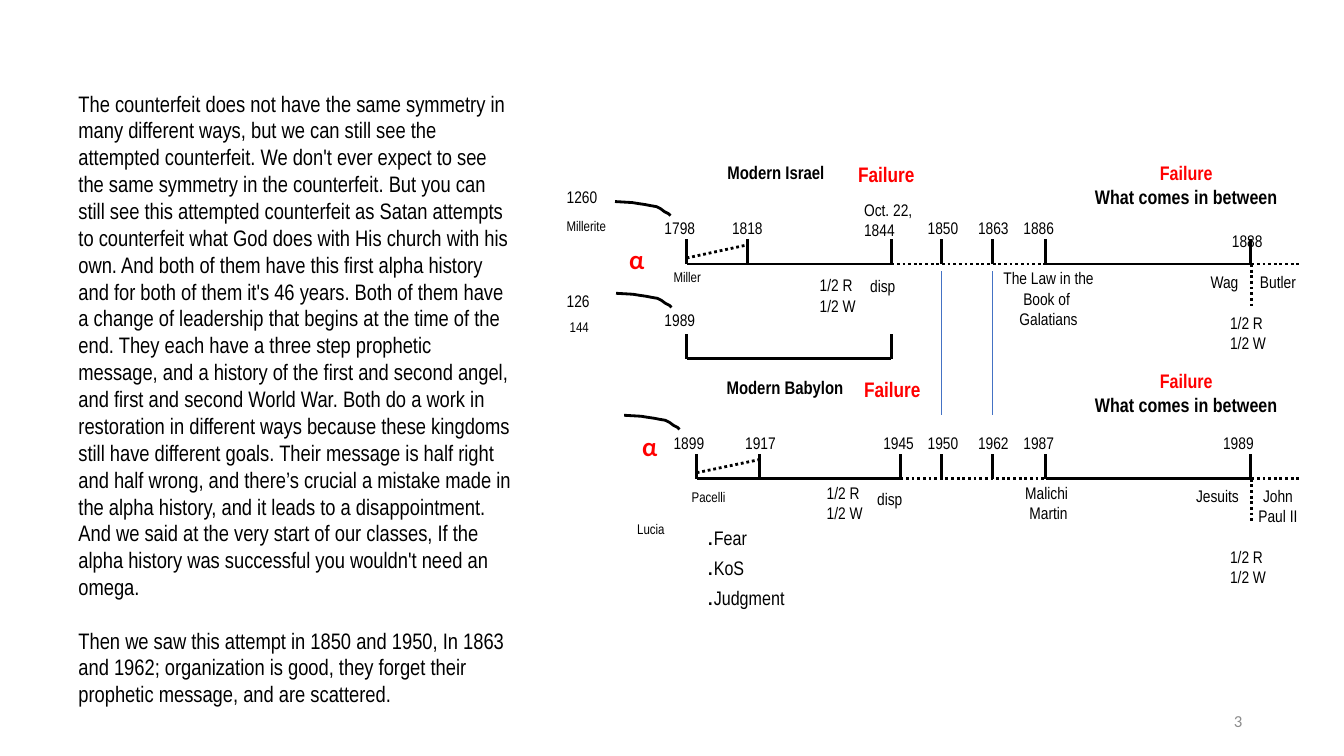
from lxml.etree import SubElement
from pptx import Presentation
from pptx.dml.color import RGBColor
from pptx.enum.dml import MSO_LINE
from pptx.enum.shapes import MSO_CONNECTOR
from pptx.enum.text import MSO_ANCHOR, MSO_AUTO_SIZE, PP_ALIGN
from pptx.oxml.ns import qn
from pptx.util import Inches, Pt

BLACK, RED, BLUE, GREY = "000000", "FF0000", "4472C4", "8C8C8C"
CENTER, RIGHT = PP_ALIGN.CENTER, PP_ALIGN.RIGHT


def color(hex_value):
    return RGBColor.from_string(hex_value)


class TimelineSlide:
    style = {"name": "Arial Narrow", "size": 12, "bold": False, "color": BLACK}

    def __init__(self, slide):
        self.shapes = slide.shapes

    def text(self, lines, left, top, width, height=0.25, align=None,
             inset=(0.04, 0.04), frame_format=None, gap=0, **font_format):
        """Each line is a string or a list of (string, font format) runs."""
        box = self.shapes.add_textbox(*map(Inches, (left, top, width, height)))
        frame = box.text_frame
        side, edge = map(Inches, inset)
        settings = {"word_wrap": True, "margin_left": side, "margin_right": side,
                    "margin_top": edge, "margin_bottom": edge, **(frame_format or {})}
        for key, value in settings.items():
            setattr(frame, key, value)
        for index, line in enumerate([lines] if isinstance(lines, str) else lines):
            paragraph = frame.add_paragraph() if index else frame.paragraphs[0]
            paragraph.alignment = align
            if index and gap:
                paragraph.space_before = Pt(gap)
            for content, run_format in [(line, {})] if isinstance(line, str) else line:
                self.run(paragraph, content, {**self.style, **font_format, **run_format})

    def run(self, paragraph, content, font_format):
        for index, part in enumerate(content.split("\v")):
            if index:
                paragraph.add_line_break()
            run = paragraph.add_run()
            run.text = part
            values = {**font_format, "size": Pt(font_format["size"])}
            run.font.color.rgb = color(values.pop("color"))
            for key, value in values.items():
                setattr(run.font, key, value)

    def line(self, x1, y1, x2, y2, dotted=False, ink=BLACK, width=2):
        connector = self.shapes.add_connector(
            MSO_CONNECTOR.STRAIGHT, *map(Inches, (x1, y1, x2, y2)))
        connector.line.color.rgb = color(ink)
        connector.line.width = Pt(width)
        if dotted:
            connector.line.dash_style = MSO_LINE.ROUND_DOT
        SubElement(connector._element.spPr, qn("a:effectLst"))

    def curve(self, left, top):
        steps = [(0.17, 0.01), (0.23, 0.02), (0.3, 0.03), (0.35, 0.04), (0.41, 0.05),
                 (0.45, 0.07), (0.49, 0.1), (0.53, 0.12), (0.55, 0.14)]
        builder = self.shapes.build_freeform(Inches(left), Inches(top))
        builder.add_line_segments(
            [(Inches(left + dx), Inches(top + dy)) for dx, dy in steps], close=False)
        arc = builder.convert_to_shape()
        arc.fill.background()
        arc.line.color.rgb = color(BLACK)
        arc.line.width = Pt(2)
        arc.shadow.inherit = False

    def bracket(self, start, end, base, inner=()):
        self.line(start, base, end, base)
        for x in (start, *inner, end):
            self.line(x, base, x, base - 0.25)

    def timeline(self, base, start, second, end, years):
        self.bracket(start, end, base, [second])
        self.line(start, base - 0.06, second, base - 0.19, dotted=True)
        # Scattering, then the second history
        self.line(end, base, 10.41, base, dotted=True)
        for x in (9.34, 9.84):
            self.line(x, base, x, base - 0.25)
        self.bracket(10.37, 12.4, base)
        self.line(12.41, base, 12.41, base + 0.44, dotted=True)
        self.line(12.41, base, 12.91, base, dotted=True)
        for year, left in years:
            self.text(year, left, base - 0.5, 0.62)


def main():
    presentation = Presentation()
    presentation.slide_width, presentation.slide_height = Inches(13.33), Inches(7.5)
    page = TimelineSlide(presentation.slides.add_slide(presentation.slide_layouts[6]))

    # Commentary
    symmetry = [
        "The counterfeit does not have the same symmetry in many different ways, but we can "
        "still see the attempted counterfeit.",
        "We don't ever expect to see the same symmetry in the counterfeit.",
        "But you can still see this attempted counterfeit as Satan attempts to counterfeit "
        "what God does with His church with his own.",
        "And both of them have this first alpha history and for both of them it's 46 years.",
        "Both of them have a change of leadership that begins at the time of the end.",
        "They each have a three step prophetic message, and a history of the first and second "
        "angel, and first and second World War.",
        "Both do a work in restoration in different ways because these kingdoms still have "
        "different goals.",
        "Their message is half right and half wrong, and there’s crucial a mistake made in "
        "the alpha history, and it leads to a disappointment.",
        "And we said at the very start of our classes, If the alpha history was successful "
        "you wouldn't need an omega.",
    ]
    scattering = ("Then we saw this attempt in 1850 and 1950, In 1863 and 1962; organization is "
                  "good, they forget their prophetic message, and are scattered.")
    page.text([" ".join(symmetry), scattering], 0.68, 0.84, 4.5, 6.29, inset=(0.1, 0.05),
              gap=19, size=16, frame_format={"auto_size": MSO_AUTO_SIZE.SHAPE_TO_FIT_TEXT})

    # Timelines and the short history between them
    page.timeline(2.62, 6.81, 7.41, 8.84, [
        ("1798", 6.55), ("1818", 7.22), ("1850", 9.16), ("1863", 9.66), ("1886", 10.11)])
    page.timeline(4.75, 6.91, 7.53, 8.93, [
        ("1899", 6.64), ("1917", 7.35), ("1945", 8.72), ("1950", 9.16), ("1962", 9.66),
        ("1987", 10.11), ("1989", 12.09)])
    page.bracket(6.81, 8.84, 3.56)
    page.text("1989", 6.55, 3.03, 0.62)
    page.text(["Oct. 22,", "1844"], 8.53, 1.94, 0.56, 0.56)
    page.text("1888", 12.09, 2.25, 0.56, align=CENTER)
    for left, top in [(6.1, 2), (6.11, 2.91), (6.19, 4.12)]:
        page.curve(left, top)
    for x in (9.34, 9.84):
        page.line(x, 2.69, x, 4.12, ink=BLUE, width=0.5)

    # Headings
    for heading, left, top in [("Modern Israel", 6.55, 1.56), ("Modern Babylon", 6.64, 3.69)]:
        page.text(heading, left, top, 2.29, 0.31, CENTER, size=13, bold=True)
    for left, top in [(8.28, 1.56), (8.34, 3.69)]:
        page.text("Failure", left, top, 1.02, 0.32, CENTER, size=15, bold=True, color=RED)
    for top in (1.56, 3.62):
        page.text([[("Failure", {"color": RED})], "What comes in between"],
                  10.62, top, 2.29, 0.56, CENTER, size=14, bold=True)
    for left, top in [(6.2, 2.38), (6.33, 4.24)]:
        page.text("α", left, top, 0.46, 0.44, name="Lato", size=18, bold=True, color=RED)

    # Periods leading in
    page.text("1260", 5.58, 1.81, 0.62)
    page.text("126", 5.58, 2.84, 0.62)
    page.text("Millerite", 5.47, 2.12, 0.69, 0.31, CENTER, size=10)
    page.text("144", 5.41, 3.12, 0.67, 0.31, CENTER, size=10)

    # Messengers and messages
    for messenger, left, top in [("Miller", 6.64, 2.62), ("Pacelli", 6.82, 4.81),
                                 ("Lucia", 6.28, 5.12)]:
        page.text(messenger, left, top, 0.62, size=10)
    for left, top in [(8.09, 2.69), (12.16, 3.06), (8.16, 4.75), (12.16, 5.38)]:
        page.text(["1/2 R", "1/2 W"], left, top, 0.5, 0.56)
    for left, top in [(8.59, 2.69), (8.66, 4.81)]:
        page.text("disp", left, top, 0.5)
    for lines, left, top, width, height in [
            (["The Law in the Book of ", "Galatians"], 9.87, 2.62, 1.06, 0.88),
            ("Malichi \vMartin", 9.87, 4.75, 1.06, 0.56),
            ("Wag", 11.91, 2.66, 0.47, 0.25),
            ("Butler", 12.44, 2.66, 0.47, 0.25),
            ("Jesuits", 11.78, 4.78, 0.59, 0.25),
            ("John Paul II", 12.44, 4.78, 0.47, 0.59)]:
        page.text(lines, left, top, width, height, CENTER)
    dot = (".", {"name": "Arial", "size": 18})
    page.text([[dot, (theme, {})] for theme in ("Fear", "KoS", "Judgment")],
              6.97, 5.12, 1.12, 0.81, size=14)

    # Page number
    page.text("3", 9.42, 6.95, 3, 0.4, RIGHT, inset=(0.1, 0.05), name="Calibri", color=GREY,
              frame_format={"vertical_anchor": MSO_ANCHOR.MIDDLE})

    presentation.save("out.pptx")


if __name__ == "__main__":
    main()
